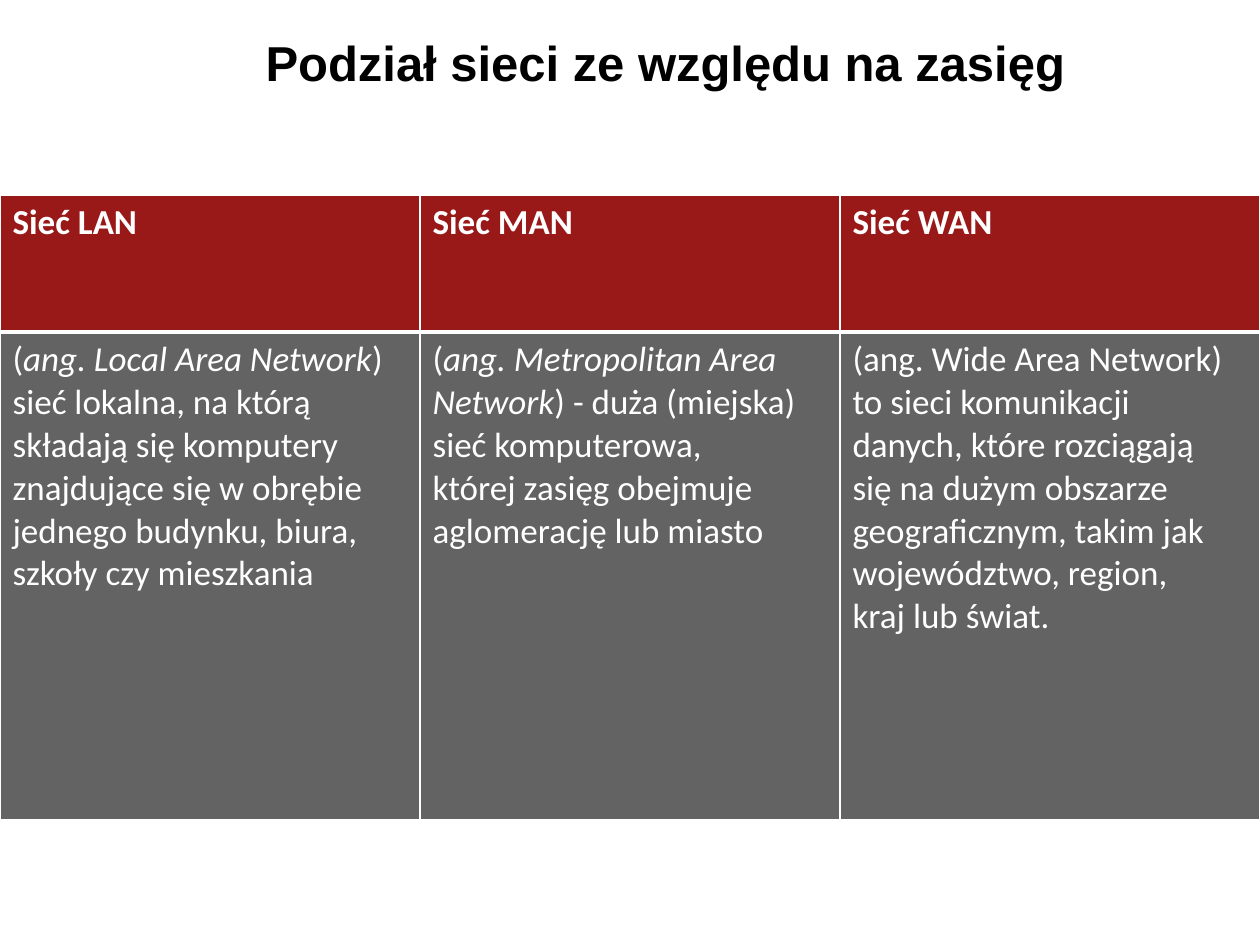
from dataclasses import dataclass

from lxml.etree import SubElement
from pptx import Presentation
from pptx.dml.color import RGBColor
from pptx.enum.text import MSO_ANCHOR, PP_ALIGN
from pptx.oxml import parse_xml
from pptx.oxml.ns import nsdecls, qn
from pptx.util import Pt


@dataclass(frozen=True)
class Theme:
    black: str = "000000"
    white: str = "FFFFFF"
    red: str = "8E0000"
    gray: str = "404040"
    title: int = 28
    body: int = 20
    head_font: str = "Arial"
    body_font: str = "Calibri"
    thin: int = 1
    thick: int = 3


THEME = Theme()
WIDTH, HEIGHT = 1260, 945

NETS = [
    ("Sieć LAN", [
        [("(",), ("ang. Local Area Network", True),
         (") sieć lokalna, na którą składają się komputery",)],
        [("znajdujące się w obrębie jednego budynku, biura, szkoły czy mieszkania",)],
    ]),
    ("Sieć MAN", [
        [("(",), ("ang. Metropolitan Area Network", True),
         (") - duża (miejska) sieć komputerowa,",)],
        [("której zasięg obejmuje aglomerację lub miasto",)],
    ]),
    ("Sieć WAN", [
        [("(ang. Wide Area Network) to sieci komunikacji danych, które rozciągają",)],
        [("się na dużym obszarze geograficznym, takim jak województwo, region,",)],
        [("kraj lub świat.",)],
    ]),
]


def px(n):
    return round(n * 914400 / 126)


def write(frame, paras, *, font, size, color, bold=False):
    """Fill a frame with paragraphs, each a list of (text, italic) runs."""
    for i, parts in enumerate(paras):
        para = frame.paragraphs[0] if i == 0 else frame.add_paragraph()
        para.alignment = PP_ALIGN.LEFT
        for text, *slant in parts:
            run = para.add_run()
            run.text = text
            run.font.name = font
            run.font.size = Pt(size)
            run.font.bold = bold
            run.font.italic = bool(slant)
            run.font.color.rgb = RGBColor.from_string(color)


def paint(cell, color, alpha):
    """Fill a cell with a colour at the given opacity in percent."""
    cell.fill.solid()
    cell.fill.fore_color.rgb = RGBColor.from_string(color)
    tint = cell._tc.tcPr.find(".//" + qn("a:srgbClr"))
    SubElement(tint, qn("a:alpha"), val=str(alpha * 1000))


def edge(cell, *, top, bottom):
    """Draw white borders; the side borders are always thin."""
    sides = {"L": THEME.thin, "R": THEME.thin, "T": top, "B": bottom}
    for i, (side, width) in enumerate(sides.items()):
        line = parse_xml(
            f'<a:ln{side} {nsdecls("a")} w="{Pt(width)}"><a:solidFill>'
            f'<a:srgbClr val="{THEME.white}"/></a:solidFill></a:ln{side}>')
        cell._tc.tcPr.insert(i, line)


def add_title(slide, x, y, w, h):
    title = slide.shapes.title
    title.left, title.top, title.width, title.height = map(px, (x, y, w, h))
    frame = title.text_frame
    frame.vertical_anchor = MSO_ANCHOR.TOP
    frame.word_wrap = True
    write(frame, [[("Podział sieci ze względu na zasięg",)]],
          font=THEME.head_font, size=THEME.title, color=THEME.black, bold=True)


def add_nets(slide, x, y, w, h, head):
    """Place the table of networks; head is the height of its first row."""
    table = slide.shapes.add_table(2, len(NETS), *map(px, (x, y, w, h))).table
    table.rows[0].height = px(head)
    table.rows[1].height = px(h - head)
    for col, (name, paras) in enumerate(NETS):
        table.columns[col].width = px(w // len(NETS))
        top, low = table.cell(0, col), table.cell(1, col)
        look = dict(font=THEME.body_font, size=THEME.body, color=THEME.white)
        write(top.text_frame, [[(name,)]], bold=True, **look)
        write(low.text_frame, paras, **look)
        paint(top, THEME.red, 90)
        paint(low, THEME.gray, 81)
        edge(top, top=THEME.thin, bottom=THEME.thick)
        edge(low, top=THEME.thick, bottom=THEME.thin)


def main():
    deck = Presentation()
    deck.slide_width, deck.slide_height = px(WIDTH), px(HEIGHT)
    slide = deck.slides.add_slide(deck.slide_layouts[5])
    add_title(slide, 253, 26, 853, 72)
    add_nets(slide, 0, 195, WIDTH, 625, head=137)
    deck.save("out.pptx")


if __name__ == "__main__":
    main()
